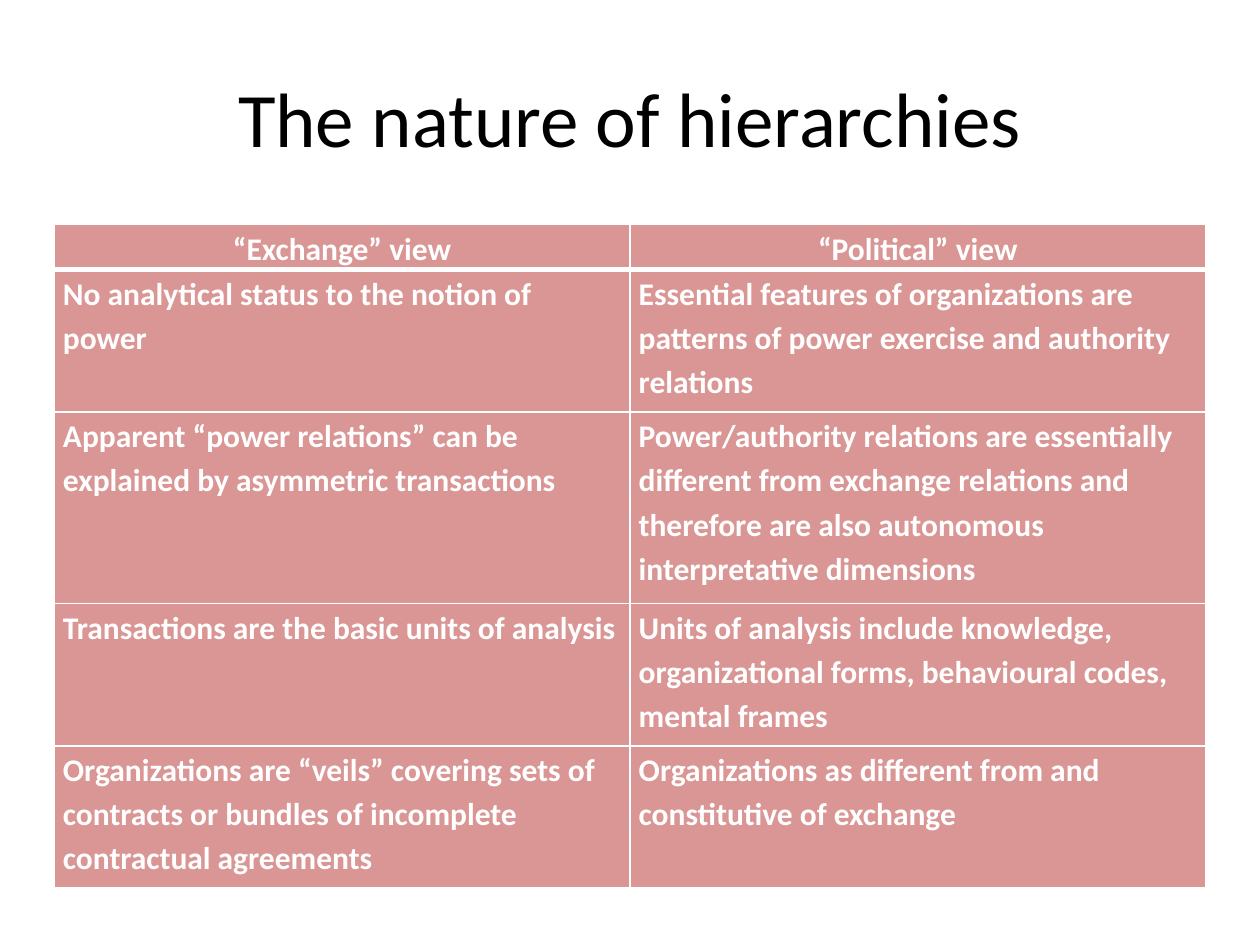
from lxml import etree
from pptx import Presentation
from pptx.dml.color import RGBColor
from pptx.enum.text import MSO_ANCHOR, PP_ALIGN
from pptx.oxml.ns import qn
from pptx.util import Inches, Pt

CENTER, LEFT = PP_ALIGN.CENTER, PP_ALIGN.LEFT
MIDDLE, TOP = MSO_ANCHOR.MIDDLE, MSO_ANCHOR.TOP
BLACK = RGBColor(0x00, 0x00, 0x00)
WHITE = RGBColor(0xFF, 0xFF, 0xFF)
ROSE = RGBColor(0xD9, 0x96, 0x94)

VIEWS = [
    ("“Exchange” view", "“Political” view"),
    ("No analytical status to the notion of power",
     "Essential features of organizations are patterns of power exercise "
     "and authority relations"),
    ("Apparent “power relations” can be explained by asymmetric transactions",
     "Power/authority relations are essentially different from exchange "
     "relations and therefore are also autonomous interpretative dimensions"),
    ("Transactions are the basic units of analysis",
     "Units of analysis include knowledge, organizational forms, "
     "behavioural codes, mental frames"),
    ("Organizations are “veils” covering sets of contracts or bundles of "
     "incomplete contractual agreements",
     "Organizations as different from and constitutive of exchange"),
]
ROW_HEIGHTS = [0.36, 1.13, 1.52, 1.13, 1.13]
COLUMN_WIDTH = 4.57


class SlideBuilder:
    font_name = "Calibri"

    def __init__(self, slide):
        self.slide = slide

    def styled_text(self, frame, text, size, color, align, bold=False):
        frame.text = text
        paragraph = frame.paragraphs[0]
        paragraph.alignment = align
        font = paragraph.runs[0].font
        font.name, font.size, font.bold = self.font_name, Pt(size), bold
        font.color.rgb = color
        return paragraph

    def title(self, text, left, top, width, height):
        box = self.slide.shapes.add_textbox(
            Inches(left), Inches(top), Inches(width), Inches(height))
        frame = box.text_frame
        frame.word_wrap = True
        frame.vertical_anchor = MIDDLE
        self.styled_text(frame, text, 44, BLACK, CENTER)

    def table(self, rows, left, top, column_width, row_heights):
        columns = len(rows[0])
        table = self.slide.shapes.add_table(
            len(rows), columns, Inches(left), Inches(top),
            Inches(columns * column_width), Inches(sum(row_heights))).table
        for column in table.columns:
            column.width = Inches(column_width)
        for r, (texts, height) in enumerate(zip(rows, row_heights)):
            table.rows[r].height = Inches(height)
            for c, text in enumerate(texts):
                self.cell(table.cell(r, c), text, CENTER if r == 0 else LEFT)
                self.borders(table.cell(r, c), top=3 if r == 1 else 1,
                             bottom=3 if r == 0 else 1)

    def cell(self, cell, text, align):
        cell.margin_left = cell.margin_right = Inches(0.07)
        cell.margin_top = cell.margin_bottom = 0
        cell.vertical_anchor = TOP
        paragraph = self.styled_text(
            cell.text_frame, text, 18, WHITE, align, bold=True)
        paragraph.line_spacing = 1.15
        cell.fill.solid()
        cell.fill.fore_color.rgb = ROSE

    def borders(self, cell, top, bottom):
        """Draw white cell edges; top and bottom are widths in points."""
        properties = cell._tc.get_or_add_tcPr()
        edges = [("a:lnL", 1), ("a:lnR", 1), ("a:lnT", top), ("a:lnB", bottom)]
        for position, (tag, width) in enumerate(edges):
            line = etree.Element(qn(tag), w=str(Pt(width)))
            fill = etree.SubElement(line, qn("a:solidFill"))
            etree.SubElement(fill, qn("a:srgbClr"), val=str(WHITE))
            properties.insert(position, line)


def main():
    presentation = Presentation()
    presentation.slide_width, presentation.slide_height = Inches(10), Inches(7.5)
    blank = presentation.slide_layouts[6]
    builder = SlideBuilder(presentation.slides.add_slide(blank))
    builder.title("The nature of hierarchies", 0.5, 0.3, 9, 1.25)
    builder.table(VIEWS, 0.43, 1.78, COLUMN_WIDTH, ROW_HEIGHTS)
    presentation.save("out.pptx")


if __name__ == "__main__":
    main()
